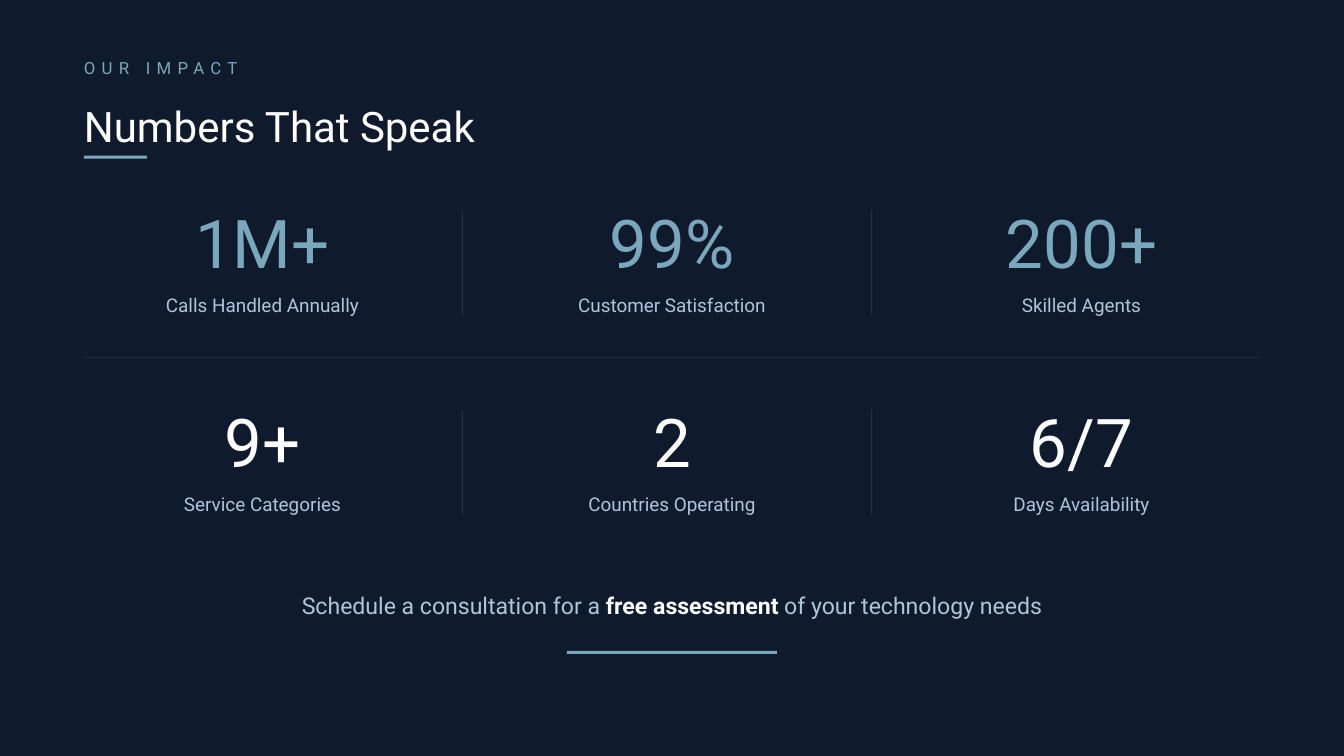
"""Build the impact slide: six key figures in a grid, with a closing call to action."""
from lxml import etree
from pptx import Presentation
from pptx.dml.color import RGBColor
from pptx.enum import shapes, text
from pptx.oxml.ns import qn
from pptx.util import Cm, Pt

LABEL = "OUR IMPACT"
TITLE = "Numbers That Speak"
STATS = [
    [("1M+", "Calls Handled Annually"), ("99%", "Customer Satisfaction"), ("200+", "Skilled Agents")],
    [("9+", "Service Categories"), ("2", "Countries Operating"), ("6/7", "Days Availability")],
]
CLOSING = [
    ("Schedule a consultation for a ", "soft", False),
    ("free assessment", "white", True),
    (" of your technology needs", "soft", False),
]
THEME = {
    "font": "Roboto",
    "color": {"back": "0F1B2D", "teal": "7BA7BC", "soft": "B0C4DE", "white": "FFFFFF"},
    "size": {"label": 16, "title": 40, "stat": 64, "name": 18, "close": 22},
}
WIDE, HIGH = 45.16, 25.4
LEFT, TOP = 2.82, 6.7
CELL, GAP, PITCH = 12, 1.76, 6.7
FULL = 3 * CELL + 2 * GAP
THIN, THICK = 0.03, 0.1
LEFTWARD, CENTER = text.PP_ALIGN.LEFT, text.PP_ALIGN.CENTER


def paint(fill, color):
    fill.solid()
    fill.fore_color.rgb = RGBColor.from_string(THEME["color"][color])


def write(box, place, runs, size, align=LEFTWARD, lead=None, wrap=False, track=None):
    box.left, box.top, box.width, box.height = map(Cm, place)
    frame = box.text_frame
    frame.auto_size = text.MSO_AUTO_SIZE.NONE
    frame.word_wrap = wrap
    frame.vertical_anchor = text.MSO_ANCHOR.MIDDLE
    frame.margin_left = frame.margin_right = frame.margin_top = frame.margin_bottom = 0
    para = frame.paragraphs[0]
    para.alignment = align
    if lead:
        para.line_spacing = lead
    for words, color, bold in runs:
        run = para.add_run()
        run.text = words
        run.font.name = THEME["font"]
        run.font.size = Pt(THEME["size"][size])
        run.font.bold = bold
        paint(run.font.fill, color)
        if track:
            run.font._element.set("spc", str(track * 100))


def add_text(slide, place, *args, **style):
    write(slide.shapes.add_textbox(*map(Cm, place)), place, *args, **style)


def add_bar(slide, place, alpha=None):
    bar = slide.shapes.add_shape(shapes.MSO_SHAPE.RECTANGLE, *map(Cm, place))
    bar.shadow.inherit = False
    bar.line.fill.background()
    paint(bar.fill, "teal")
    if alpha:
        tint = bar._element.spPr.find(qn("a:solidFill"))[0]
        etree.SubElement(tint, qn("a:alpha")).set("val", str(alpha * 1000))


def add_stats(slide):
    for row, (stats, color) in enumerate(zip(STATS, ("teal", "white"))):
        top = TOP + row * PITCH
        for col, (stat, name) in enumerate(stats):
            left = LEFT + col * (CELL + GAP)
            add_text(slide, (left, top, CELL, 2.82), [(stat, color, False)], "stat", CENTER)
            add_text(slide, (left, top + 3, CELL, 1.06), [(name, "soft", False)], "name", CENTER)
            if col:
                add_bar(slide, (left - 1.06, top + 0.36, THIN, 3.53), alpha=25)


def main():
    deck = Presentation()
    deck.slide_width, deck.slide_height = Cm(WIDE), Cm(HIGH)
    slide = deck.slides.add_slide(deck.slide_layouts[5])
    paint(slide.background.fill, "back")

    add_text(slide, (LEFT, 1.76, 14.11, 1.06), [(LABEL, "teal", False)], "label", track=6)
    write(slide.shapes.title, (LEFT, 3, 24.7, 1.94), [(TITLE, "white", False)], "title", lead=1.3)
    add_bar(slide, (LEFT, 5.23, 2.12, THICK))

    add_stats(slide)
    add_bar(slide, (LEFT, 11.99, FULL, THIN), alpha=19)

    add_text(slide, (LEFT, 19.05, FULL, 2.12), CLOSING, "close", CENTER, lead=1.5, wrap=True)
    add_bar(slide, ((WIDE - 7.06) / 2, 21.87, 7.06, THICK))
    deck.save("out.pptx")


if __name__ == "__main__":
    main()
